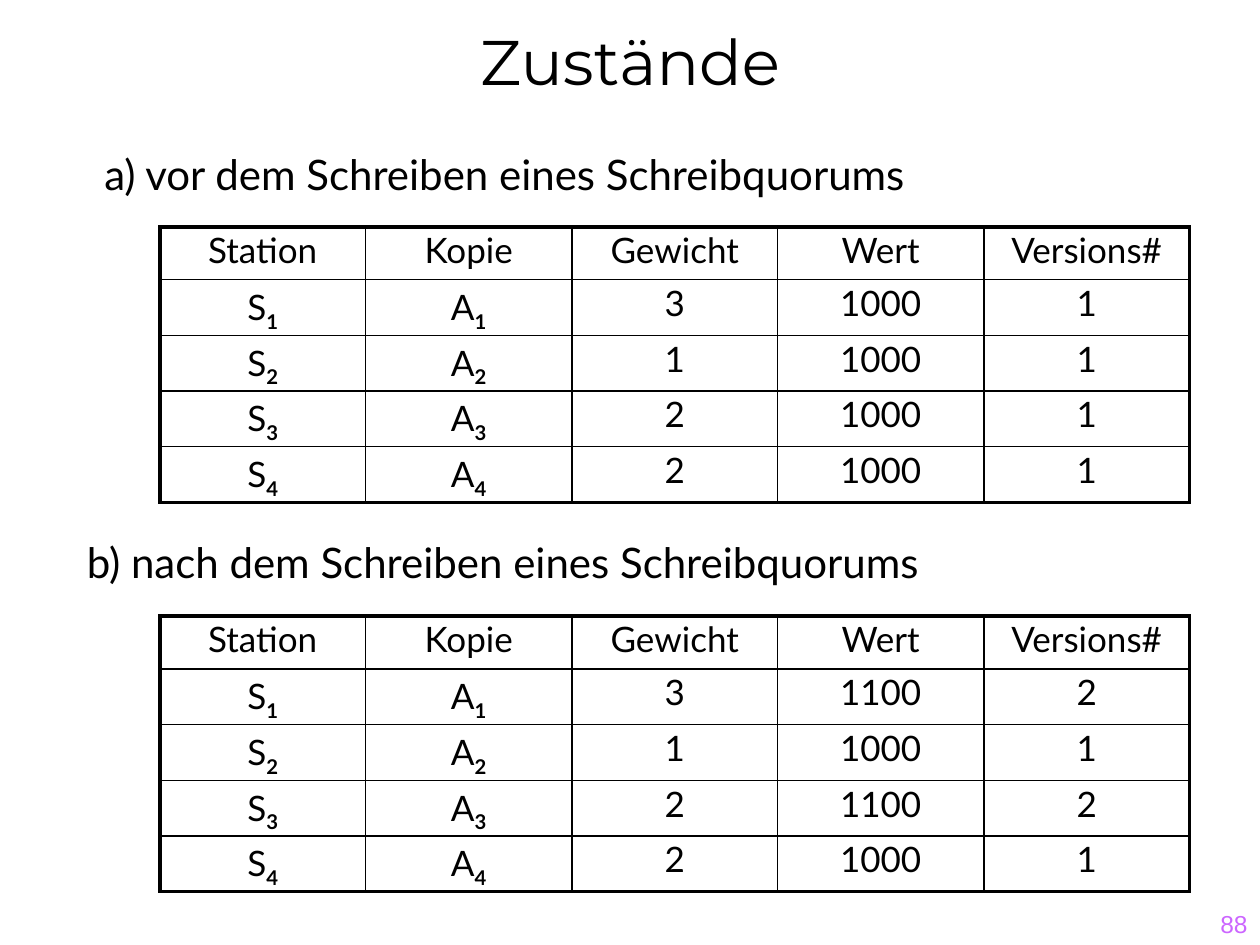
import pptx
import pptx.util
import pptx.dml.color
import pptx.enum.text
from lxml import etree
from pptx.util import Inches, Pt

BLACK = pptx.dml.color.RGBColor(0x00, 0x00, 0x00)
VIOLET = pptx.dml.color.RGBColor(0xCC, 0x66, 0xFF)
ALIGN = pptx.enum.text.PP_ALIGN
ANCHOR = pptx.enum.text.MSO_ANCHOR
A = "{http://schemas.openxmlformats.org/drawingml/2006/main}"

# Content
TITLE = "Zustände"
PAGE = "88"
HEADER = ("Station", "Kopie", "Gewicht", "Wert", "Versions#")
WEIGHTS = (3, 1, 2, 2)
# heading, heading box (left, top, width), table top, (value, version) per station
STATES = [
    ("a) vor dem Schreiben eines Schreibquorums", (0.73, 1.13, 6.7), 1.8,
     [(1000, 1), (1000, 1), (1000, 1), (1000, 1)]),
    ("b) nach dem Schreiben eines Schreibquorums", (0.59, 4.21, 6.95), 4.89,
     [(1100, 2), (1000, 1), (1100, 2), (1000, 1)]),
]

# Table geometry
TABLE_LEFT, TABLE_WIDTH = 1.27, 8.17
COLS = (1.63, 1.64, 1.63, 1.64, 1.63)
ROWS = (0.42, 0.37, 0.42, 0.39, 0.35)
OUTER, INNER = 2.25, 1


def write(tf, text, sub="", font="Lato", size=20, color=BLACK,
          align=ALIGN.LEFT, line=None, before=None):
    """Write one paragraph, with an optional bold subscript."""
    p = tf.paragraphs[0]
    p.alignment = align
    if line:
        p.line_spacing = line
    if before is not None:
        p.space_before = Pt(0)
        spacing = p._p.pPr.find(A + "spcBef")
        spacing.remove(spacing[0])
        etree.SubElement(spacing, A + "spcPct", val=str(before * 1000))
    for part in filter(None, (text, sub)):
        r = p.add_run()
        r.text = part
        r.font.name, r.font.size = font, Pt(size)
        r.font.color.rgb = color
        r.font.bold = part is sub
    if sub:
        r.font._element.set("baseline", "-25000")


def set_borders(cell, **widths):
    tcPr = cell._tc.get_or_add_tcPr()
    for i, (side, width) in enumerate(widths.items()):
        ln = etree.Element(A + "ln" + side, w=str(Pt(width)))
        fill = etree.SubElement(ln, A + "solidFill")
        etree.SubElement(fill, A + "srgbClr", val=str(BLACK))
        tcPr.insert(i, ln)


def add_text_box(s, left, top, width, height=0.5, wrap=False):
    sp = s.shapes.add_textbox(*map(Inches, (left, top, width, height)))
    sp.text_frame.word_wrap = wrap
    return sp.text_frame


def add_state_table(s, top, values):
    rows = [[(name, "") for name in HEADER]]
    for n, (weight, (value, version)) in enumerate(zip(WEIGHTS, values), 1):
        rows.append([("S", str(n)), ("A", str(n)), (str(weight), ""),
                     (str(value), ""), (str(version), "")])
    table = s.shapes.add_table(
        len(ROWS), len(COLS), Inches(TABLE_LEFT), Inches(top),
        Inches(TABLE_WIDTH), Inches(sum(ROWS))).table
    table.first_row = table.horz_banding = False
    for col, width in zip(table.columns, COLS):
        col.width = Inches(width)
    for row, height in zip(table.rows, ROWS):
        row.height = Inches(height)
    for i, row in enumerate(rows):
        for j, (text, sub) in enumerate(row):
            cell = table.cell(i, j)
            cell.fill.background()
            write(cell.text_frame, text, sub, align=ALIGN.CENTER,
                  line=0.9, before=20)
            set_borders(cell,
                        L=OUTER if j == 0 else INNER,
                        R=OUTER if j == len(COLS) - 1 else INNER,
                        T=OUTER if i == 0 else INNER,
                        B=OUTER if i == len(ROWS) - 1 else INNER)


prs = pptx.Presentation()
prs.slide_width, prs.slide_height = Inches(10), Inches(7.5)
s = prs.slides.add_slide(prs.slide_layouts[5])

# Title
title = s.shapes.title
title.left, title.top, title.width, title.height = map(
    Inches, (0, -0.42, 10, 1.25))
title.text_frame.vertical_anchor = ANCHOR.BOTTOM
write(title.text_frame, TITLE, font="Montserrat", size=36, align=ALIGN.CENTER)

# Headings with their tables
for heading, box, table_top, values in STATES:
    tf = add_text_box(s, *box)
    tf.auto_size = pptx.enum.text.MSO_AUTO_SIZE.SHAPE_TO_FIT_TEXT
    write(tf, heading, size=24)
    add_state_table(s, table_top, values)

# Page number
tf = add_text_box(s, 7.92, 7, 2.08, wrap=True)
tf.vertical_anchor = ANCHOR.BOTTOM
write(tf, PAGE, font="Arial", size=14, color=VIOLET, align=ALIGN.RIGHT, before=50)

prs.save("out.pptx")
